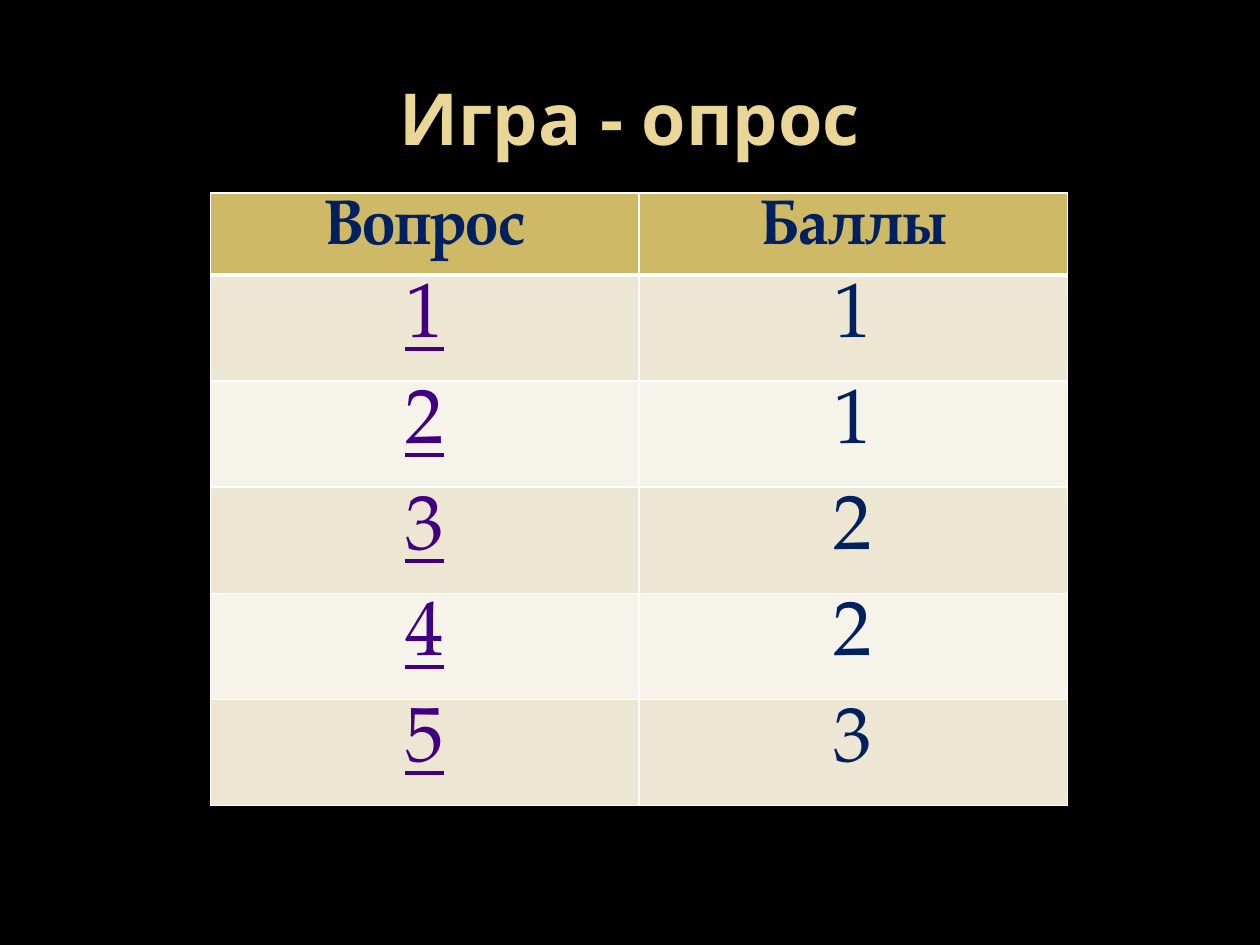
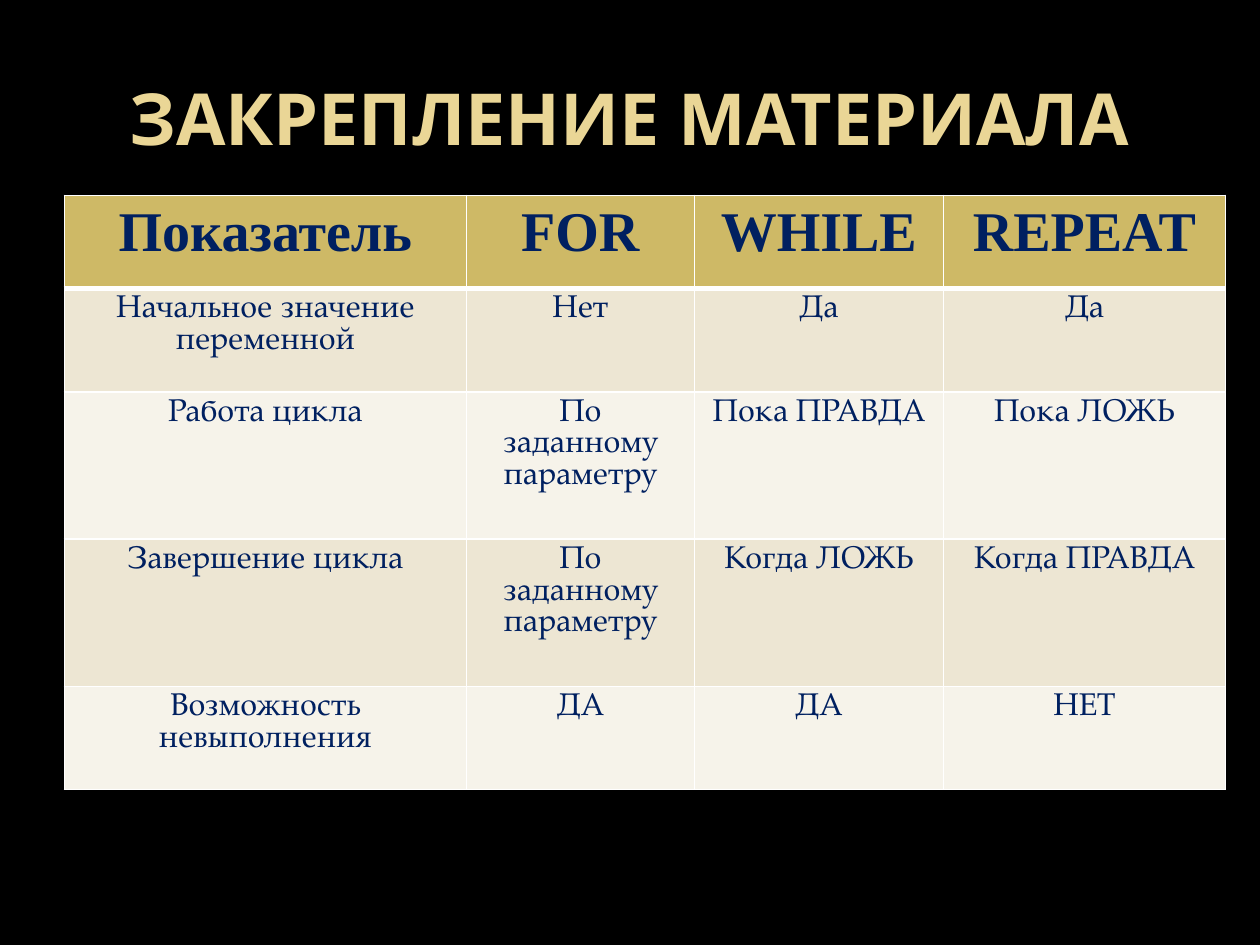
from dataclasses import dataclass

from pptx import Presentation
from pptx.dml.color import RGBColor
from pptx.enum.text import MSO_ANCHOR, PP_ALIGN
from pptx.oxml import parse_xml
from pptx.oxml.ns import nsdecls
from pptx.util import Cm, Pt


@dataclass(frozen=True)
class Theme:
    # Colours
    background: str = "000000"
    title: str = "EAD696"
    ink: str = "002060"
    question: str = "410082"
    header_fill: str = "CEB966"
    bands: tuple = ("EDE6D3", "F6F3EA")
    rule: str = "FFFFFF"
    # Fonts and sizes
    title_font: str = "Open Sans"
    body_font: str = "TeX Gyre Pagella"
    loops_header_font: str = "Times New Roman"
    title_size: int = 41
    quiz_header_size: int = 36
    quiz_size: int = 44
    loops_header_size: int = 32
    loops_size: int = 18
    # Rule widths in points
    thin: int = 1
    thick: int = 3


THEME = Theme()
TITLE_BOX = (1.27, 0.76, 22.86, 3.18)


def style(paragraph, font_name, size, colour, bold=False, underline=False):
    paragraph.alignment = PP_ALIGN.CENTER
    font = paragraph.font
    font.name, font.size = font_name, Pt(size)
    font.bold, font.underline = bold, underline
    font.color.rgb = RGBColor.from_string(colour)


def add_titled_slide(deck, title):
    """Black slide with the shared title style."""
    slide = deck.slides.add_slide(deck.slide_layouts[6])
    background = slide.background.fill
    background.solid()
    background.fore_color.rgb = RGBColor.from_string(THEME.background)

    frame = slide.shapes.add_textbox(*map(Cm, TITLE_BOX)).text_frame
    frame.word_wrap = True
    frame.vertical_anchor = MSO_ANCHOR.MIDDLE
    frame.text = title
    style(frame.paragraphs[0], THEME.title_font, THEME.title_size,
          THEME.title, bold=True)
    return slide


def rule_cell(cell, top, bottom):
    """White rules on all four sides, widths in points."""
    properties = cell._tc.get_or_add_tcPr()
    widths = {"L": THEME.thin, "R": THEME.thin, "T": top, "B": bottom}
    for side, width in widths.items():
        properties.append(parse_xml(
            f'<a:ln{side} {nsdecls("a")} w="{Pt(width)}"><a:solidFill>'
            f'<a:srgbClr val="{THEME.rule}"/></a:solidFill></a:ln{side}>'))


def add_banded_table(slide, left, top, columns, heights, rows,
                     header_style, body_style):
    """Table with a gold header; body_style(column) gives font settings."""
    table = slide.shapes.add_table(
        len(rows), len(columns), Cm(left), Cm(top),
        Cm(sum(columns)), Cm(sum(heights))).table
    for column, width in zip(table.columns, columns):
        column.width = Cm(width)

    for r, (row, height) in enumerate(zip(rows, heights)):
        table.rows[r].height = Cm(height)
        for c, words in enumerate(row):
            cell = table.cell(r, c)
            cell.text = words
            cell.margin_bottom = 0
            # The thick rule parts the header from the body
            rule_cell(cell,
                      top=THEME.thick if r == 1 else THEME.thin,
                      bottom=THEME.thick if r == 0 else THEME.thin)
            fill = THEME.bands[(r - 1) % 2] if r else THEME.header_fill
            cell.fill.solid()
            cell.fill.fore_color.rgb = RGBColor.from_string(fill)
            style(cell.text_frame.paragraphs[0],
                  **(body_style(c) if r else header_style))


def quiz_slide(deck):
    slide = add_titled_slide(deck, "Игра - опрос")
    points = [1, 1, 2, 2, 3]
    rows = [("Вопрос", "Баллы")]
    rows += [(str(n), str(score)) for n, score in enumerate(points, 1)]

    def body_style(column):
        is_question = column == 0
        return dict(font_name=THEME.body_font, size=THEME.quiz_size,
                    colour=THEME.question if is_question else THEME.ink,
                    underline=is_question)

    add_banded_table(
        slide, 4.24, 3.89, [8.64] * 2, [1.45] + [2.14] * len(points), rows,
        dict(font_name=THEME.body_font, size=THEME.quiz_header_size,
             colour=THEME.ink, bold=True),
        body_style)


def loops_slide(deck):
    slide = add_titled_slide(deck, "ЗАКРЕПЛЕНИЕ МАТЕРИАЛА")
    rows = [
        ("Показатель", "FOR", "WHILE", "REPEAT"),
        ("Начальное значение переменной", "Нет", "Да", "Да"),
        ("Работа цикла", "По заданному параметру", "Пока ПРАВДА", "Пока ЛОЖЬ"),
        ("Завершение цикла", "По заданному параметру", "Когда ЛОЖЬ",
         "Когда ПРАВДА"),
        ("Возможность невыполнения", "ДА", "ДА", "НЕТ"),
    ]
    add_banded_table(
        slide, 1.3, 3.94, [8.1, 4.6, 5.02, 5.69],
        [1.88, 2.08, 2.97, 2.97, 2.08], rows,
        dict(font_name=THEME.loops_header_font, size=THEME.loops_header_size,
             colour=THEME.ink, bold=True),
        lambda column: dict(font_name=THEME.body_font, size=THEME.loops_size,
                            colour=THEME.ink))


def main():
    deck = Presentation()
    deck.slide_width, deck.slide_height = Cm(25.4), Cm(19.05)
    quiz_slide(deck)
    loops_slide(deck)
    deck.save("out.pptx")


if __name__ == "__main__":
    main()
